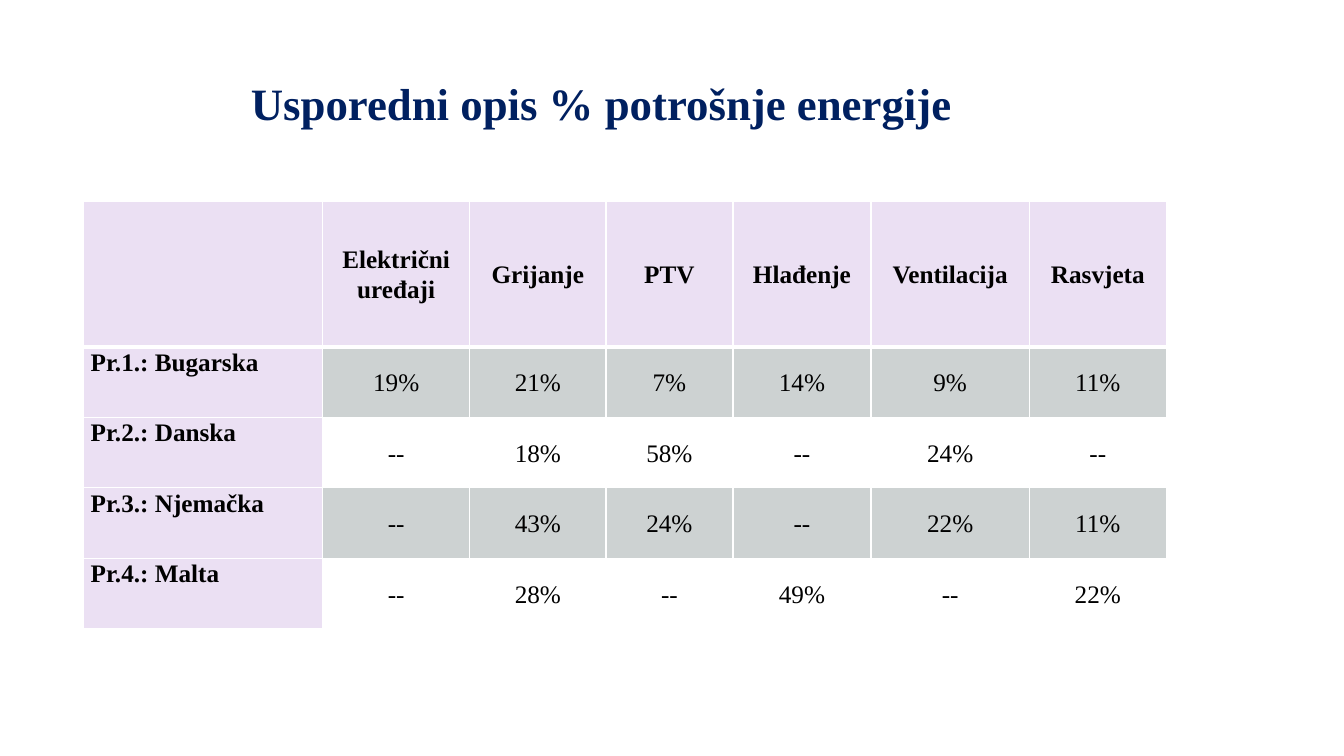
from dataclasses import dataclass

from lxml import etree
from pptx import Presentation
from pptx.dml.color import RGBColor
from pptx.enum.text import MSO_ANCHOR, PP_ALIGN
from pptx.oxml.ns import qn
from pptx.table import _Cell
from pptx.text.text import TextFrame
from pptx.util import Inches, Pt

CENTER, JUSTIFY = PP_ALIGN.CENTER, PP_ALIGN.JUSTIFY
TOP, MIDDLE, BOTTOM = MSO_ANCHOR.TOP, MSO_ANCHOR.MIDDLE, MSO_ANCHOR.BOTTOM

FONT = "Times New Roman"
NAVY, BLACK, WHITE = "002060", "000000", "FFFFFF"
LILAC, GREY = "EBE0F3", "CDD2D2"


@dataclass
class Country:
    label: str
    shares: list[str]


HEADERS = ["", "Električni uređaji", "Grijanje", "PTV", "Hlađenje", "Ventilacija", "Rasvjeta"]
COUNTRIES = [
    Country("Pr.1.: Bugarska", ["19%", "21%", "7%", "14%", "9%", "11%"]),
    Country("Pr.2.: Danska", ["--", "18%", "58%", "--", "24%", "--"]),
    Country("Pr.3.: Njemačka", ["--", "43%", "24%", "--", "22%", "11%"]),
    Country("Pr.4.: Malta", ["--", "28%", "--", "49%", "--", "22%"]),
]
COL_WIDTHS = [2.37, 1.46, 1.35, 1.26, 1.37, 1.57, 1.36]
ROW_HEIGHTS = [1.44] + [0.7] * len(COUNTRIES)


def rgb(color: str) -> RGBColor:
    return RGBColor.from_string(color)


def write(tf: TextFrame, text: str, *, size: float = 18, color: str = BLACK, bold: bool = False,
          align: PP_ALIGN = CENTER, spacing: float = 1.07) -> None:
    p = tf.paragraphs[0]
    p.alignment = align
    p.line_spacing = spacing
    if not text:
        p.font.size = Pt(size)
        return
    r = p.add_run()
    r.text = text
    r.font.name = FONT
    r.font.size = Pt(size)
    r.font.bold = bold
    r.font.color.rgb = rgb(color)


def set_borders(cell: _Cell, top: float = 1, bottom: float = 1) -> None:
    tc_pr = cell._tc.get_or_add_tcPr()
    for side, width in (("L", 1), ("R", 1), ("T", top), ("B", bottom)):
        ln = etree.SubElement(tc_pr, qn(f"a:ln{side}"), w=str(Pt(width)))
        fill = etree.SubElement(ln, qn("a:solidFill"))
        etree.SubElement(fill, qn("a:srgbClr"), val=WHITE)


def format_cell(cell: _Cell, text: str, row: int, col: int) -> None:
    is_header, is_label = row == 0, col == 0
    # Borders come before the fill in the cell properties
    set_borders(cell, top=3 if row == 1 else 1, bottom=3 if is_header else 1)
    cell.fill.solid()
    band = GREY if row % 2 else WHITE
    cell.fill.fore_color.rgb = rgb(LILAC if is_header or is_label else band)
    cell.margin_left = cell.margin_right = Inches(0.07)
    cell.margin_top = cell.margin_bottom = 0
    cell.vertical_anchor = TOP if is_label else MIDDLE
    write(cell.text_frame, text, bold=is_header or is_label, align=JUSTIFY if is_label else CENTER)


def main() -> None:
    prs = Presentation()
    prs.slide_width, prs.slide_height = Inches(13.33), Inches(7.5)
    s = prs.slides.add_slide(prs.slide_layouts[5])

    # Title
    title = s.shapes.title
    title.left, title.top = Inches(0.84), Inches(0.33)
    title.width, title.height = Inches(10.25), Inches(1)
    title.text_frame.vertical_anchor = BOTTOM
    write(title.text_frame, "Usporedni opis % potrošnje energije", size=32, color=NAVY, bold=True, spacing=0.8)

    # Table of energy shares
    rows = [HEADERS] + [[c.label, *c.shares] for c in COUNTRIES]
    table = s.shapes.add_table(
        len(rows), len(HEADERS), Inches(0.83), Inches(2),
        Inches(sum(COL_WIDTHS)), Inches(sum(ROW_HEIGHTS))).table
    for column, width in zip(table.columns, COL_WIDTHS):
        column.width = Inches(width)
    for table_row, height in zip(table.rows, ROW_HEIGHTS):
        table_row.height = Inches(height)
    for i, texts in enumerate(rows):
        for j, text in enumerate(texts):
            format_cell(table.cell(i, j), text, i, j)

    prs.save("out.pptx")


if __name__ == "__main__":
    main()
